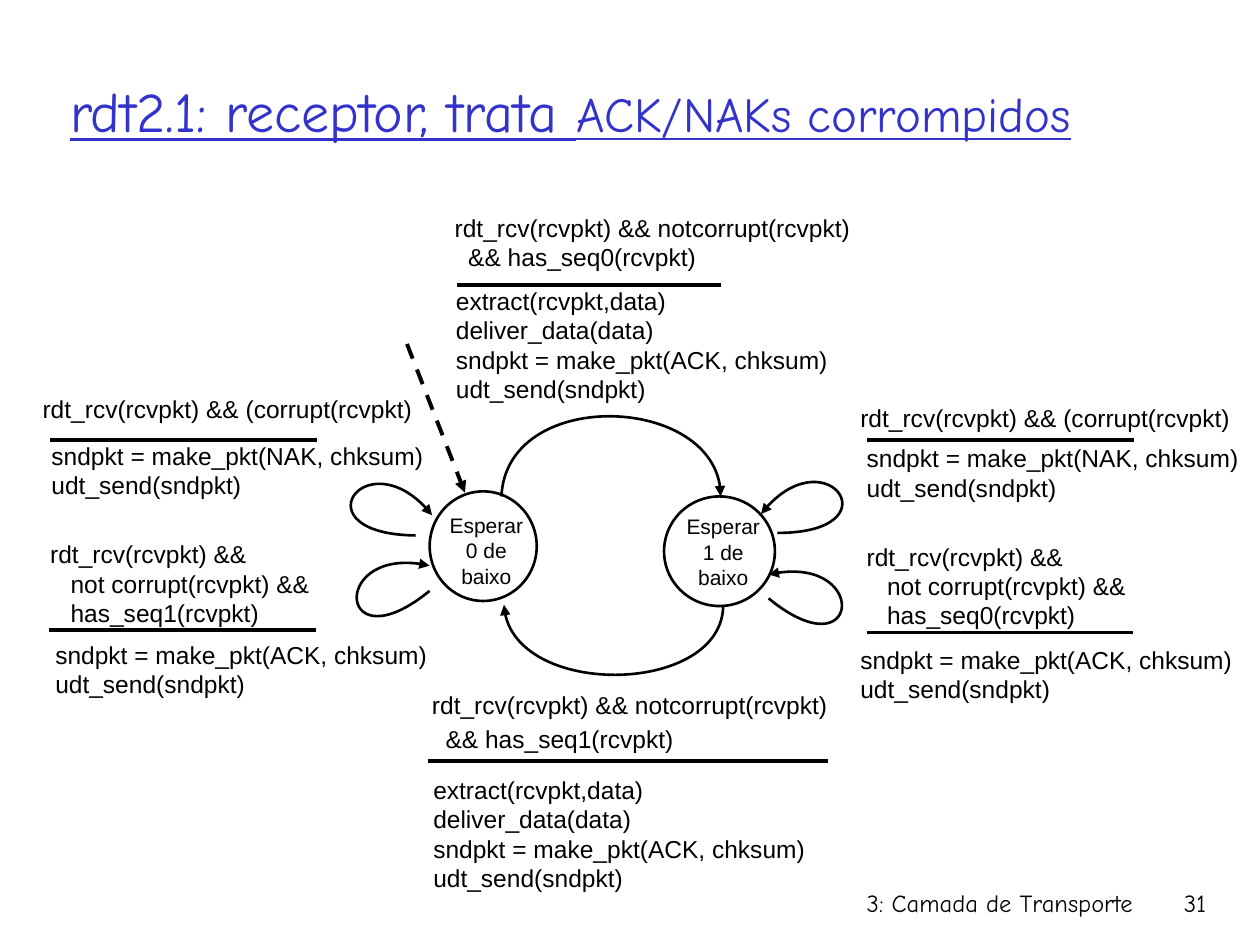
import dataclasses

import pptx
import pptx.dml.color
import pptx.enum.dml
import pptx.enum.shapes
import pptx.enum.text
import pptx.oxml.ns
import pptx.util
from lxml import etree


@dataclasses.dataclass(frozen=True)
class Theme:
    ink = pptx.dml.color.RGBColor(0x00, 0x00, 0x00)
    paper = pptx.dml.color.RGBColor(0xFF, 0xFF, 0xFF)
    accent = pptx.dml.color.RGBColor(0x33, 0x33, 0xCC)
    display = "Comic Neue"
    body = "Arial"
    title = 32
    title_small = 28
    label = 14
    state = 12
    curve = 1.5
    rule = 2.25


theme = Theme()
qn = pptx.oxml.ns.qn
Align = pptx.enum.text.PP_ALIGN

prs = pptx.Presentation()
prs.slide_width = pptx.util.Inches(10)
prs.slide_height = pptx.util.Inches(7.5)
s = prs.slides.add_slide(prs.slide_layouts[6])

# The slide is a grid of 100 columns by 75 rows.
col = prs.slide_width // 100
row = prs.slide_height // 75


def add_text(x, y, w, h, lines, font=theme.body, size=theme.label,
             align=Align.LEFT, gap=0):
    """Add one paragraph per line; gap is the space in points between them."""
    box = s.shapes.add_textbox(int(x * col), int(y * row), int(w * col), int(h * row))
    tf = box.text_frame
    tf.word_wrap = True
    for i, line in enumerate(lines):
        p = tf.paragraphs[0] if i == 0 else tf.add_paragraph()
        p.text = line
        p.alignment = align
        if i and gap:
            p.space_before = pptx.util.Pt(gap)
        p.font.name = font
        p.font.size = pptx.util.Pt(size)
        p.font.color.rgb = theme.ink
    return tf


def draw_stroke(sp, width, arrow=False):
    """Give a shape or connector a plain ink line, without shadow."""
    sp.line.color.rgb = theme.ink
    sp.line.width = pptx.util.Pt(width)
    if arrow:
        etree.SubElement(sp.line._get_or_add_ln(), qn("a:tailEnd"), type="triangle")
    etree.SubElement(sp._element.spPr, qn("a:effectLst"))


# Title
tf = add_text(4.6, 2.5, 91, 12.5, [""])
tf.vertical_anchor = pptx.enum.text.MSO_ANCHOR.MIDDLE
p = tf.paragraphs[0]
p.font.name = theme.display
p.font.color.rgb = theme.accent
p.font.underline = True
for text, size in [("rdt2.1: receptor, trata ", theme.title),
                   ("ACK/NAKs corrompidos", theme.title_small)]:
    r = p.add_run()
    r.text = text
    r.font.size = pptx.util.Pt(size)

# States: circle position and width, then label position
states = [
    (34.1, 39, 8.5, 34.2, 40.2, "Esperar 0 de baixo"),
    (52.7, 39.4, 8.8, 53, 40.3, "Esperar 1 de baixo"),
]
for x, y, w, label_x, label_y, text in states:
    sp = s.shapes.add_shape(pptx.enum.shapes.MSO_SHAPE.OVAL, int(x * col),
                            int(y * row), int(w * col), int(8.7 * row))
    sp.fill.solid()
    sp.fill.fore_color.rgb = theme.paper
    draw_stroke(sp, theme.curve)
    add_text(label_x, label_y, 8.8, 6.7, [text], size=theme.state, align=Align.CENTER)

# Transitions: start, two control points and end of each Bézier curve
transitions = [
    [(39.8, 39.4), (40.2, 30.8), (57.2, 31.3), (57.2, 39.4)],
    [(57.4, 48), (57.4, 55.1), (40.4, 55.5), (40, 48)],
    [(61.7, 42.3), (71, 42.3), (65.5, 34.3), (60.4, 40.8)],
    [(61, 47.5), (68.2, 53.4), (69.1, 43.8), (61, 45.6)],
    [(34.1, 46.9), (26.9, 52.8), (26.1, 43.1), (34.1, 44.9)],
    [(33, 42.5), (23.7, 42.4), (29.2, 34.5), (34.3, 40.9)],
]
for curve in transitions:
    start, *rest = [(x * col, y * row) for x, y in curve]
    builder = s.shapes.build_freeform(*start)
    builder.add_line_segments(rest, close=False)
    sp = builder.convert_to_shape()
    sp.fill.background()
    draw_stroke(sp, theme.curve, arrow=True)
    # Turn the three straight segments into one cubic segment.
    segments = list(sp._element.iter(qn("a:lnTo")))
    bezier = etree.SubElement(segments[0].getparent(), qn("a:cubicBezTo"))
    for segment in segments:
        bezier.append(segment[0])
        segment.getparent().remove(segment)

# Rules between event and action, then the dashed arrow into the first state
rules = [
    (36.3, 22.6, 57.2, 22.6),
    (34, 60.4, 65.7, 60.4),
    (4, 34.9, 25.2, 34.9),
    (3.9, 50, 25.1, 50),
    (68.8, 34.9, 90, 34.9),
    (68.8, 50.2, 89.9, 50.2),
]
entry = (32.3, 27.3, 36.9, 39.1)
for ends in rules + [entry]:
    x1, y1, x2, y2 = ends
    line = s.shapes.add_connector(pptx.enum.shapes.MSO_CONNECTOR.STRAIGHT,
                                  int(x1 * col), int(y1 * row),
                                  int(x2 * col), int(y2 * row))
    if ends == entry:
        line.line.dash_style = pptx.enum.dml.MSO_LINE.DASH
    draw_stroke(line, theme.rule, arrow=ends == entry)

# Events and actions
corrupt = ["rdt_rcv(rcvpkt) && (corrupt(rcvpkt)"]
send_nak = ["sndpkt = make_pkt(NAK, chksum)", "udt_send(sndpkt)"]
send_ack = ["sndpkt = make_pkt(ACK, chksum)", "udt_send(sndpkt)"]
deliver = ["extract(rcvpkt,data)", "deliver_data(data)", *send_ack]
expected, duplicate = [], []
for n in range(2):
    expected.append(["rdt_rcv(rcvpkt) && notcorrupt(rcvpkt)",
                     f"  && has_seq{n}(rcvpkt)"])
    duplicate.append(["rdt_rcv(rcvpkt) &&", "   not corrupt(rcvpkt) &&",
                      f"   has_seq{n}(rcvpkt)"])

labels = [
    (35.1, 16.4, 43.5, 6.2, expected[0], 0),
    (35.2, 22.2, 38, 7.7, deliver, 0),
    (33.3, 54.3, 39.2, 6.2, expected[1], 2.3),
    (33.4, 61, 42.1, 10.9, deliver, 0),
    (2.4, 30.8, 32, 6.7, corrupt, 0),
    (3.1, 34.5, 33.1, 4.5, send_nak, 0),
    (3, 42.3, 28.7, 6.7, duplicate[1], 0),
    (3.4, 50.3, 32.2, 4.5, send_ack, 0),
    (67.3, 31.5, 32, 6.7, corrupt, 0),
    (67.8, 34.7, 33.1, 4.5, send_nak, 0),
    (67.8, 42.5, 28.7, 6.7, duplicate[0], 0),
    (67.3, 50.7, 32.2, 4.5, send_ack, 0),
]
for x, y, w, h, lines, gap in labels:
    add_text(x, y, w, h, lines, gap=gap)

# Footer
for x, w, text in [(59.2, 31.7, "3: Camada de Transporte"), (89.3, 7.4, "31")]:
    add_text(x, 70, w, 5, [text], font=theme.display, align=Align.RIGHT)

prs.save("out.pptx")
